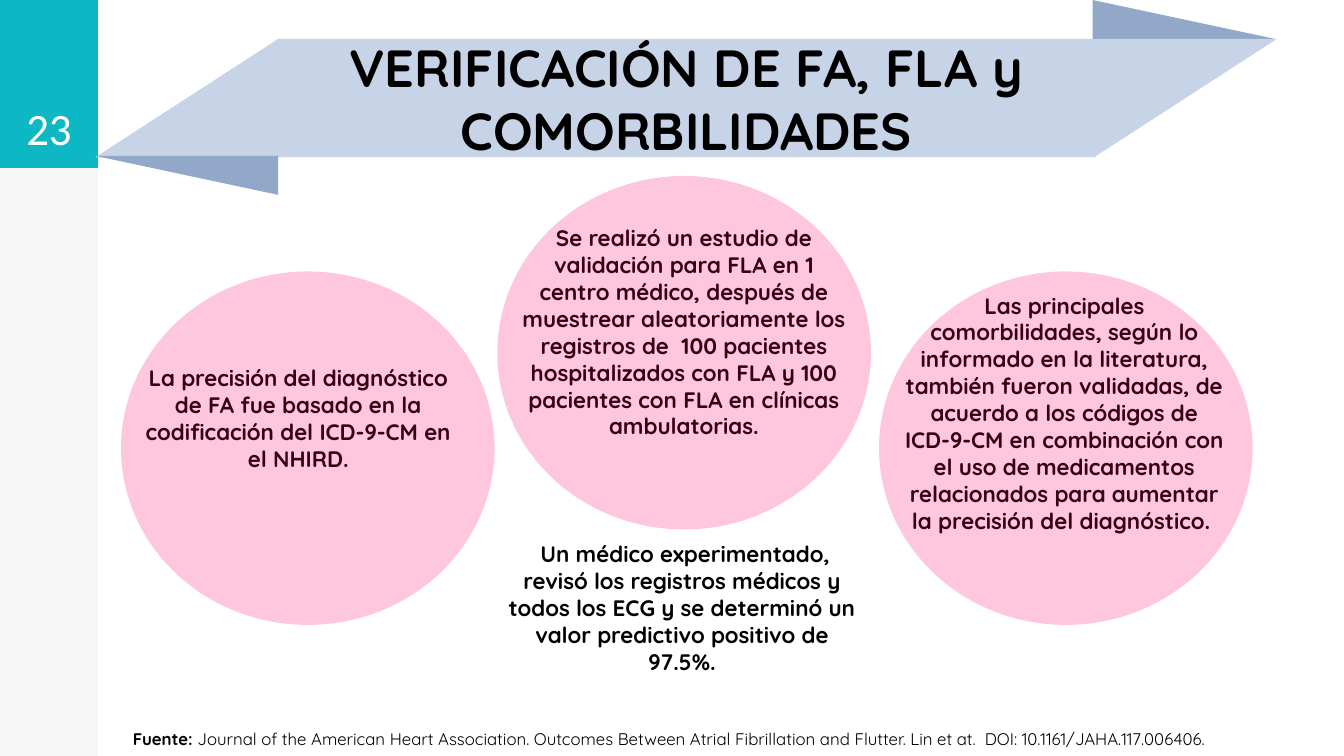
from pptx import Presentation
from pptx.dml.color import RGBColor
from pptx.enum.shapes import MSO_SHAPE
from pptx.enum.text import MSO_ANCHOR, MSO_AUTO_SIZE, PP_ALIGN
from pptx.oxml.ns import qn
from pptx.util import Inches, Pt
from lxml.etree import SubElement


def paint(fill, tint):
    fill.solid()
    fill.fore_color.rgb = RGBColor.from_string(tint)


def write(box, text, size=12, font="Quicksand", ink="000000", bold=True,
          align=PP_ALIGN.CENTER, anchor=MSO_ANCHOR.TOP, pad=(0.1, 0.1), before=0):
    frame = box.text_frame
    frame.word_wrap = True
    frame.auto_size = MSO_AUTO_SIZE.NONE
    frame.vertical_anchor = anchor
    frame.margin_left = frame.margin_right = Inches(pad[0])
    frame.margin_top = frame.margin_bottom = Inches(pad[1])
    para = frame.paragraphs[0]
    para.alignment = align
    para.space_before = Pt(before)
    run = para.add_run()
    run.text = text
    run.font.size = Pt(size)
    run.font.name = font
    run.font.bold = bold
    paint(run.font.fill, ink)


deck = Presentation()
deck.slide_width = Inches(10)
deck.slide_height = Inches(10 * 9 / 16)
slide = deck.slides.add_slide(deck.slide_layouts[5])
shapes = slide.shapes

title = shapes.title
title.left, title.top = Inches(2.06), Inches(0.29)
title.width, title.height = Inches(6.09), Inches(0.88)
paint(title.fill, "C7D3E6")
write(title, "VERIFICACIÓN DE FA, FLA y COMORBILIDADES", size=28, anchor=MSO_ANCHOR.MIDDLE)

for height, tint in [(deck.slide_height, "F6F6F6"), (Inches(1.25), "0DB7C4")]:
    band = shapes.add_shape(MSO_SHAPE.RECTANGLE, 0, 0, Inches(0.73), height)
    band.shadow.inherit = False
    paint(band.fill, tint)
    band.line.fill.background()

number = shapes.add_textbox(0, 0, Inches(0.73), Inches(1.25))
write(number, "23", size=24, font="Calibri", ink="FFFFFF", bold=False, anchor=MSO_ANCHOR.BOTTOM)

ribbon = [
    (8.13, 0, 0.29, 0, 0, "92A8C8"),
    (8.14, 0.29, 0.88, 1, 180, "C7D3E6"),
    (0.71, 0.29, 0.88, 1, 0, "C7D3E6"),
    (0.71, 1.16, 0.29, 0, 180, "92A8C8"),
]
for left, top, height, apex, turn, tint in ribbon:
    fold = shapes.add_shape(MSO_SHAPE.ISOSCELES_TRIANGLE, Inches(left), Inches(top),
                            Inches(1.36), Inches(height))
    fold.adjustments[0] = apex
    fold.rotation = turn
    fold.shadow.inherit = False
    paint(fold.fill, tint)
    fold.line.fill.background()

source = shapes.add_textbox(Inches(0.89), Inches(5.37), Inches(8.82), Inches(0.25))
for text, bold in [
    ("Fuente: ", True),
    ("Journal of the American Heart Association. Outcomes Between Atrial Fibrillation and "
     "Flutter. Lin et at.  DOI: 10.1161/JAHA.117.006406.", False),
]:
    write(source, text, size=9, bold=bold, align=PP_ALIGN.LEFT, pad=(0.1, 0.05))

notes = [
    (3.76, 1.57, 2.66, "Se realizó un estudio de validación para FLA en 1 centro médico, después de "
     "muestrear aleatoriamente los registros de  100 pacientes hospitalizados con FLA y 100 "
     "pacientes con FLA en clínicas ambulatorias."),
    (0.9, 2.61, 2.64, "La precisión del diagnóstico de FA fue basado en la codificación del "
     "ICD-9-CM en el NHIRD."),
    (3.68, 3.92, 2.79, " Un médico experimentado, revisó los registros médicos y todos los ECG y "
     "se determinó un valor predictivo positivo de 97.5%."),
    (6.59, 2.07, 2.66, "Las principales comorbilidades, según lo informado en la literatura, "
     "también fueron validadas, de acuerdo a los códigos de ICD-9-CM en combinación con el uso "
     "de medicamentos relacionados para aumentar la precisión del diagnóstico. "),
]
for left, top, width, text in notes:
    note = shapes.add_textbox(Inches(left), Inches(top), Inches(width), Inches(1.61))
    write(note, text, before=6)

for left, top in [(0.9, 2.02), (3.7, 1.31), (6.54, 2.02)]:
    disc = shapes.add_shape(MSO_SHAPE.OVAL, Inches(left), Inches(top), Inches(2.78), Inches(2.63))
    disc.shadow.inherit = False
    paint(disc.fill, "FF0066")
    disc.line.fill.background()
    tone = disc.element.spPr.find(qn("a:solidFill"))[0]
    SubElement(tone, qn("a:alpha")).set("val", "22000")

deck.save("out.pptx")
